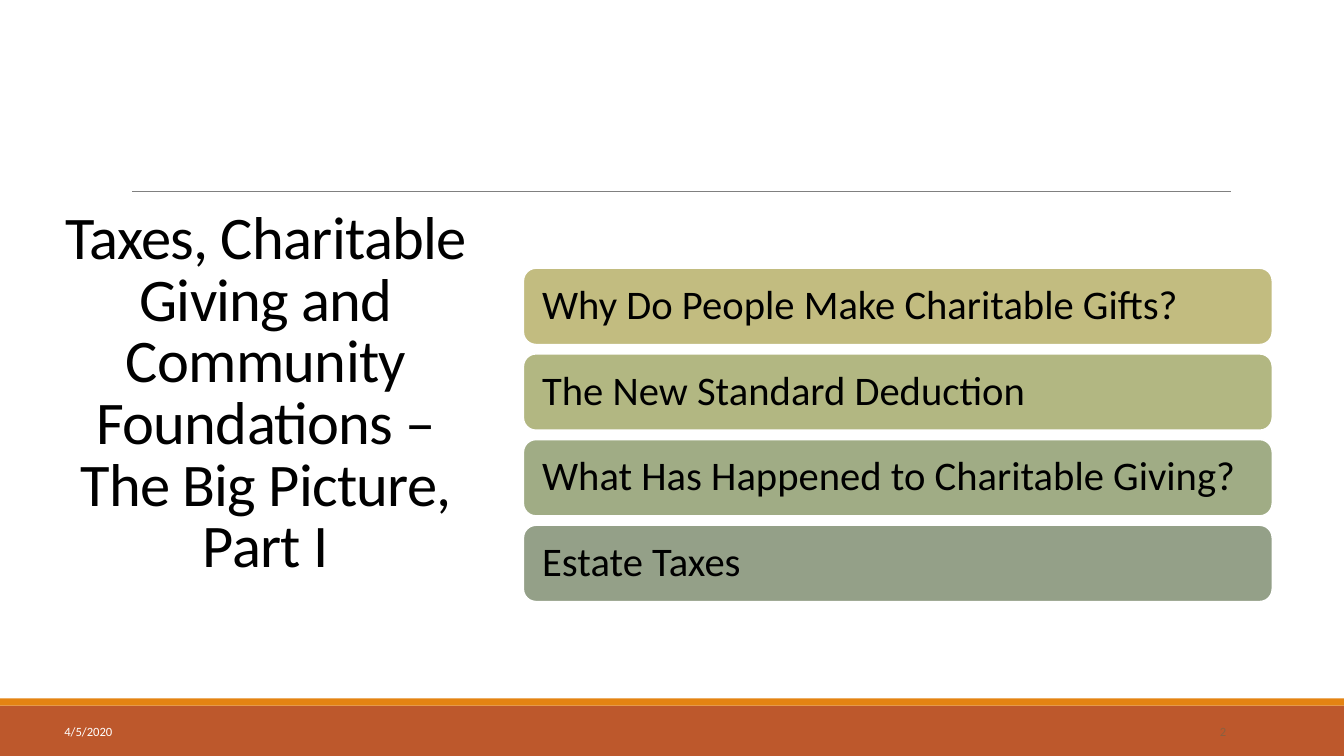
from lxml import etree
from pptx import Presentation
from pptx.dml.color import RGBColor
from pptx.enum.shapes import MSO_CONNECTOR, MSO_SHAPE
from pptx.enum.text import MSO_ANCHOR, PP_ALIGN
from pptx.oxml.ns import qn
from pptx.util import Inches, Pt

RECT, ROUNDED = MSO_SHAPE.RECTANGLE, MSO_SHAPE.ROUNDED_RECTANGLE
STRAIGHT = MSO_CONNECTOR.STRAIGHT
MIDDLE = MSO_ANCHOR.MIDDLE
LEFT, CENTER, RIGHT = PP_ALIGN.LEFT, PP_ALIGN.CENTER, PP_ALIGN.RIGHT

TOPICS = [
    ("Why Do People Make Charitable Gifts?", "C2BC80"),
    ("The New Standard Deduction", "B2B782"),
    ("What Has Happened to Charitable Giving?", "A0AC85"),
    ("Estate Taxes", "94A088"),
]
TOPIC_TOP, TOPIC_PITCH = 2.66, 0.85


def rgb(value):
    return RGBColor.from_string(value)


class SlideBuilder:
    font = "Calibri"

    def __init__(self, slide):
        self.s = slide

    def box(self, at, fill, kind=RECT, line=None):
        sp = self.s.shapes.add_shape(kind, *map(Inches, at))
        sp.shadow.inherit = False
        sp.fill.solid()
        sp.fill.fore_color.rgb = rgb(fill)
        if line:
            sp.line.color.rgb = rgb(line)
            sp.line.width = Pt(1.25)
        else:
            sp.line.fill.background()
        return sp

    def rule(self, start, end, color, width):
        cx = self.s.shapes.add_connector(STRAIGHT, *map(Inches, start + end))
        cx.line.color.rgb = rgb(color)
        cx.line.width = Pt(width)
        etree.SubElement(cx._element.spPr, qn("a:effectLst"))

    def label(self, sp, text, size, color="000000", align=LEFT, spacing=1.0,
              tracking=None, **margins):
        """Fill a shape with one paragraph; margins are in inches."""
        tf = sp.text_frame
        frame = {"word_wrap": True, "vertical_anchor": MIDDLE}
        frame.update({"margin_" + k: Inches(v) for k, v in margins.items()})
        for name, value in frame.items():
            setattr(tf, name, value)
        p = tf.paragraphs[0]
        p.alignment, p.line_spacing = align, spacing
        r = p.add_run()
        r.text = text
        for name, value in {"name": self.font, "size": Pt(size)}.items():
            setattr(r.font, name, value)
        r.font.color.rgb = rgb(color)
        if tracking:
            r._r.get_or_add_rPr().set("spc", str(int(tracking * 100)))

    def text(self, at, text, size, **style):
        sp = self.s.shapes.add_textbox(*map(Inches, at))
        self.label(sp, text, size, **style)


def main():
    prs = Presentation()
    prs.slide_width, prs.slide_height = Inches(13.33), Inches(7.5)
    b = SlideBuilder(prs.slides.add_slide(prs.slide_layouts[6]))

    b.box((0, 7, 13.33, 0.5), "BD582C")
    b.box((0, 6.93, 13.33, 0.07), "E48312")
    b.rule((1.31, 1.9), (12.21, 1.9), "808080", 0.5)

    b.text((0.54, 1.57, 4.19, 5.31),
           "Taxes, Charitable Giving and Community Foundations – The Big Picture, Part I",
           43.2, align=CENTER, spacing=0.85, tracking=-0.5, bottom=0.66)
    b.text((0.54, 7.06, 1.9, 0.4), "4/5/2020", 9, color="FFFFFF")
    b.text((10.86, 7.06, 1.4, 0.4), "2", 9, color="8A6040", align=RIGHT)

    for i, (topic, fill) in enumerate(TOPICS):
        sp = b.box((5.19, TOPIC_TOP + i * TOPIC_PITCH, 7.43, 0.76), fill,
                   ROUNDED, "FFFFFF")
        b.label(sp, topic, 29, spacing=0.9, left=0.15, right=0.15)

    prs.save("out.pptx")


if __name__ == "__main__":
    main()
